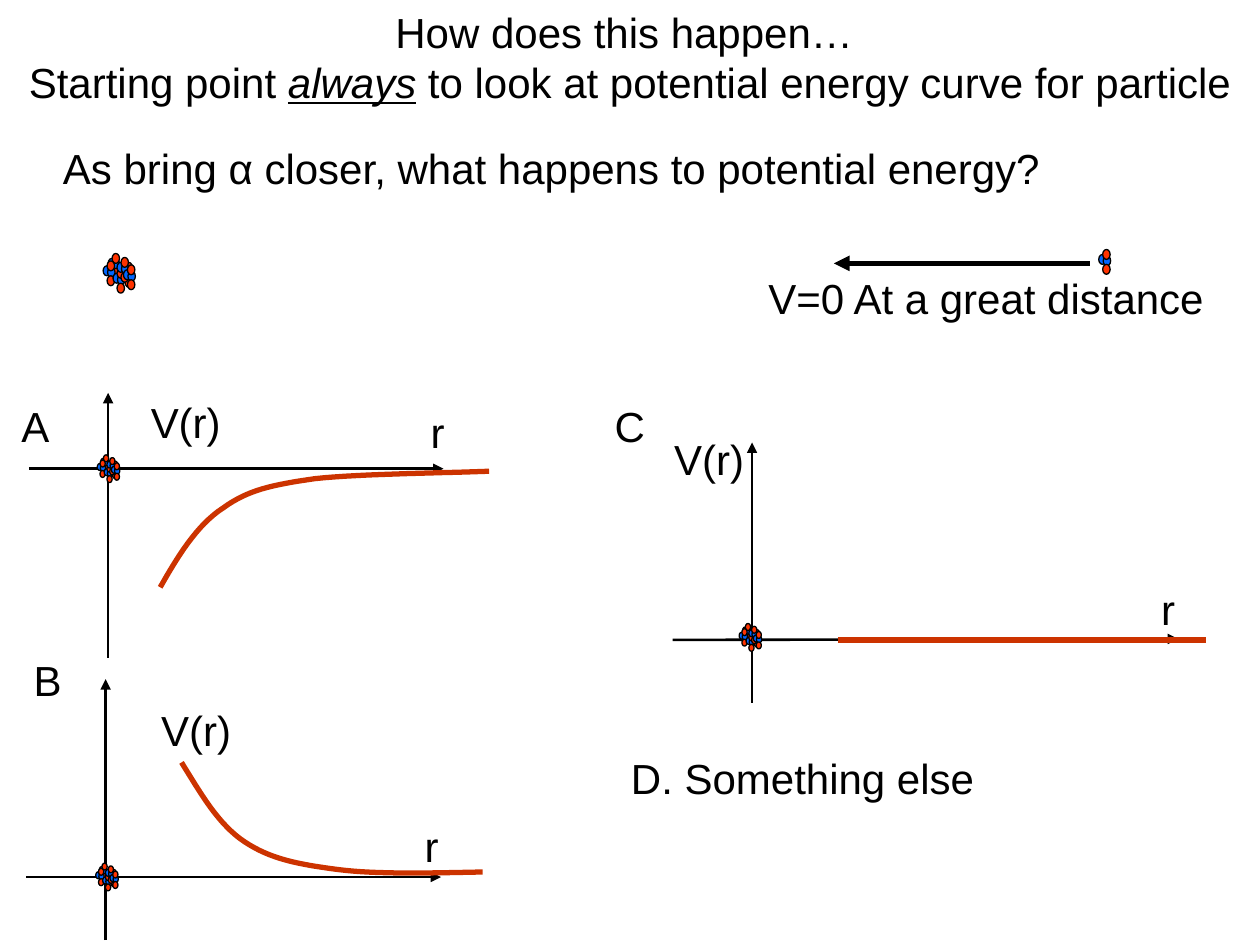
from itertools import product
from lxml import etree
from pptx import Presentation, util as u
from pptx.dml.color import RGBColor
from pptx.enum import shapes, text
from pptx.oxml.ns import qn

THEME = dict(font="Arial", size=24, ink="000000", curve="CC3300",
             blue="0066FF", red="FF3300", thin=0.75, axis=1.5, bold=3)

# Content: all lengths in cm
TITLE = [[("How does this happen… ", False)],
         [("Starting point ", False), ("always", True),
          (" to look at potential energy curve for particle", False)]]

# (text, left, top, width, wrap)
LABELS = [
    ("As bring α closer, what happens to potential energy?", 1.02, 2.74, 23.8, True),
    ("V=0 At a great distance", 15.24, 5.36, 9.47, True),
    ("A", 0.18, 7.95, 1.07, False),
    ("V(r)", 2.79, 7.87, 1.93, False),
    ("r", 8.43, 8.08, 0.79, False),
    ("B", 0.43, 13.06, 1.07, False),
    ("V(r)", 3, 14.07, 1.93, False),
    ("r", 8.31, 16.41, 0.79, False),
    ("C", 12.14, 7.95, 1.12, False),
    ("V(r)", 13.34, 8.61, 1.93, False),
    ("r", 23.16, 11.63, 0.79, False),
    ("D. Something else", 12.47, 15.04, 7.44, False),
]

# Axes, each pointing from its first end to its second
AXES = [
    ((2.18, 13.26), (2.18, 7.92)), ((0.58, 9.45), (8.94, 9.45)),
    ((2.13, 18.95), (2.13, 13.69)), ((0.53, 17.68), (8.89, 17.68)),
    ((15.16, 14.17), (15.16, 8.92)), ((13.56, 12.9), (23.75, 12.88)),
]
APPROACH = ((21.97, 5.31), (16.81, 5.31))
FLAT = ((16.89, 12.9), (24.31, 12.9))

# Bezier chains: a start, then two controls and an end per piece
CURVES = [
    [(9.86, 9.5), (9.27, 9.53), (7.24, 9.55), (6.35, 9.65), (5.46, 9.78),
     (5, 9.88), (4.5, 10.24), (3.96, 10.59), (3.58, 11.23), (3.23, 11.84)],
    [(9.73, 17.58), (8.66, 17.6), (7.59, 17.63), (6.81, 17.53), (5.99, 17.42),
     (5.46, 17.32), (4.93, 16.97), (4.39, 16.61), (4.04, 15.98), (3.66, 15.37)],
]

# An alpha is four balls; a nucleus is six alphas
BALL = (0.15, 0.2)
ALPHA = [(0, 0.1, "blue"), (0.09, 0.13, "blue"), (0.08, 0, "red"), (0.08, 0.3, "red")]
NUCLEUS = [(0.1, 0), (0, 0.15), (0.36, 0.18), (0.2, 0.3), (0.28, 0.08), (0.41, 0.23)]
# (left, top, scale, alphas)
CLUSTERS = [
    (2.08, 5.11, 1, NUCLEUS), (22.15, 5.03, 1, [(0, 0)]),
    (1.96, 9.17, 0.7, NUCLEUS), (1.93, 17.4, 0.7, NUCLEUS), (14.9, 12.57, 0.7, NUCLEUS),
]


def tint(name):
    return RGBColor.from_string(THEME[name])


def write(frame, paras, align="LEFT", wrap=True):
    """Fill a text frame with paragraphs of (text, stressed) runs."""
    frame.word_wrap = wrap
    frame.auto_size = text.MSO_AUTO_SIZE.SHAPE_TO_FIT_TEXT
    frame.vertical_anchor = text.MSO_ANCHOR.TOP
    for i, runs in enumerate(paras):
        para = frame.paragraphs[0] if i == 0 else frame.add_paragraph()
        para.alignment = getattr(text.PP_ALIGN, align)
        for words, stress in runs:
            run = para.add_run()
            run.text = words
            font = run.font
            font.name, font.size = THEME["font"], u.Pt(THEME["size"])
            font.color.rgb = tint("ink")
            if stress:
                font.italic = font.underline = True


def stroke(line, color, width):
    line.color.rgb = tint(color)
    line.width = u.Pt(THEME[width])


def draw(slide, ends, color, width, arrow=True):
    (x1, y1), (x2, y2) = ends
    line = slide.shapes.add_connector(
        shapes.MSO_CONNECTOR.STRAIGHT, u.Cm(x1), u.Cm(y1), u.Cm(x2), u.Cm(y2))
    stroke(line.line, color, width)
    if arrow:
        etree.SubElement(line.line._get_or_add_ln(), qn("a:tailEnd"), type="triangle")
    etree.SubElement(line._element.spPr, qn("a:effectLst"))


def trace(chain, steps=16):
    """Points along a chain of cubic Bezier pieces."""
    for i, k in product(range(0, len(chain) - 1, 3), range(1, steps + 1)):
        t = k / steps
        parts = ((1 - t) ** 3, 3 * t * (1 - t) ** 2, 3 * t * t * (1 - t), t ** 3)
        yield tuple(u.Cm(sum(w * p[d] for w, p in zip(parts, chain[i:i + 4])))
                    for d in (0, 1))


def curve(slide, chain):
    x, y = chain[0]
    pen = slide.shapes.build_freeform(u.Cm(x), u.Cm(y))
    pen.add_line_segments(list(trace(chain)), close=False)
    shape = pen.convert_to_shape()
    shape.shadow.inherit = False
    shape.fill.background()
    stroke(shape.line, "curve", "bold")


def cluster(slide, left, top, scale, alphas):
    group = slide.shapes.add_group_shape()
    for (ax, ay), (bx, by, color) in product(alphas, ALPHA):
        ball = group.shapes.add_shape(
            shapes.MSO_SHAPE.OVAL,
            u.Cm(left + scale * (ax + bx)), u.Cm(top + scale * (ay + by)),
            *(u.Cm(scale * side) for side in BALL))
        ball.shadow.inherit = False
        ball.fill.solid()
        ball.fill.fore_color.rgb = tint(color)
        stroke(ball.line, "ink", "thin")


def main():
    deck = Presentation()
    deck.slide_width, deck.slide_height = u.Cm(25.4), u.Cm(19.05)
    slide = deck.slides.add_slide(deck.slide_layouts[5])

    # Title
    title = slide.shapes.title
    title.left, title.top, title.width, title.height = map(u.Cm, (0, 0, 25.4, 2.29))
    write(title.text_frame, TITLE, align="CENTER")

    # Axes, arrow and energy curves
    for ends in AXES:
        draw(slide, ends, "ink", "axis")
    draw(slide, APPROACH, "ink", "bold")
    draw(slide, FLAT, "curve", "bold", arrow=False)
    for chain in CURVES:
        curve(slide, chain)

    # Particles
    for item in CLUSTERS:
        cluster(slide, *item)

    # Labels
    for words, x, y, wide, wrap in LABELS:
        box = slide.shapes.add_textbox(*map(u.Cm, (x, y, wide, 1.27)))
        write(box.text_frame, [[(words, False)]], wrap=wrap)

    deck.save("out.pptx")


if __name__ == "__main__":
    main()
